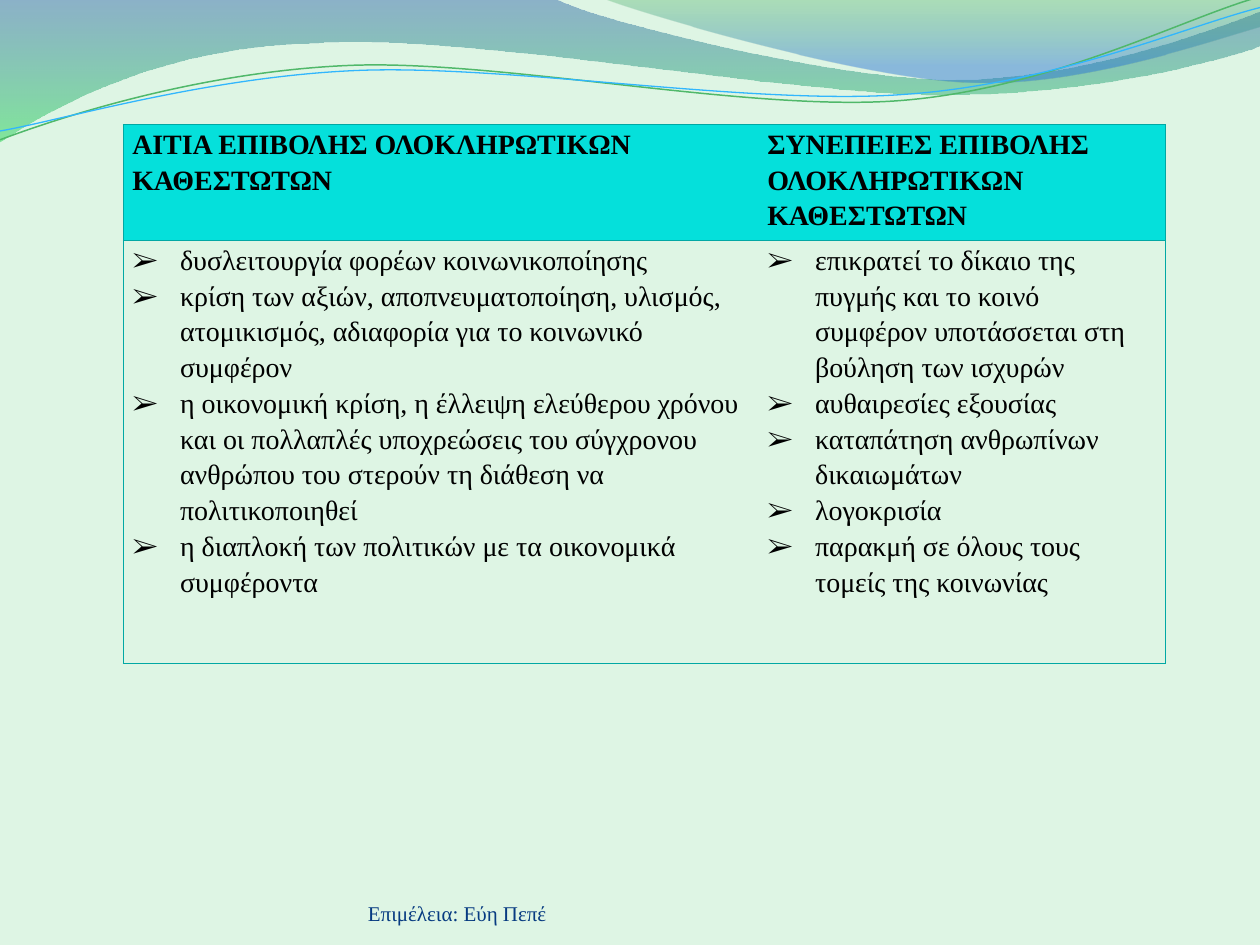
from pptx import Presentation
from pptx import util as u
from pptx.dml.color import RGBColor
from pptx.enum import text
from pptx.oxml import parse_xml
from pptx.oxml.ns import nsdecls

THEME = {
    "font": "Times New Roman", "table_size": 16, "footer_size": 12,
    "background": "DEF5E4", "header": "05E0DB", "border": "01A8A4",
    "ink": "000000", "footer": "073B81",
}

HEADERS = [
    "ΑΙΤΙΑ ΕΠΙΒΟΛΗΣ ΟΛΟΚΛΗΡΩΤΙΚΩΝ ΚΑΘΕΣΤΩΤΩΝ",
    "ΣΥΝΕΠΕΙΕΣ ΕΠΙΒΟΛΗΣ ΟΛΟΚΛΗΡΩΤΙΚΩΝ ΚΑΘΕΣΤΩΤΩΝ",
]
CAUSES = [
    "δυσλειτουργία φορέων κοινωνικοποίησης",
    "κρίση των αξιών, αποπνευματοποίηση, υλισμός, ατομικισμός, αδιαφορία για το κοινωνικό συμφέρον",
    "η οικονομική κρίση, η έλλειψη ελεύθερου χρόνου και οι πολλαπλές υποχρεώσεις του σύγχρονου "
    "ανθρώπου του στερούν τη διάθεση να πολιτικοποιηθεί",
    "η διαπλοκή των πολιτικών με τα οικονομικά συμφέροντα",
]
CONSEQUENCES = [
    "επικρατεί το δίκαιο της πυγμής και το κοινό συμφέρον υποτάσσεται στη βούληση των ισχυρών",
    "αυθαιρεσίες εξουσίας",
    "καταπάτηση ανθρωπίνων δικαιωμάτων",
    "λογοκρισία",
    "παρακμή σε όλους τους τομείς της κοινωνίας",
]
FOOTER = "Επιμέλεια: Εύη Πεπέ"

COLUMN_WIDTHS = [5.04, 3.23]
ROW_HEIGHTS = [0.47, 3.36]

# A pair is a straight segment; six numbers are a Bézier segment.
# Gradient stops: position %, colour, opacity %.
WAVES = [
    {"start": (0, 0),
     "segments": [(4.4, -0.01), (4.76, 0.17, 6.64, 0.63, 7.58, 0.63),
                  (8.53, 0.63, 9.58, 0.26, 10, 0.09), (10.01, 0.36),
                  (9.83, 0.44, 8.7, 0.76, 7.46, 0.75), (6.22, 0.75, 3.82, 0.28, 2.57, 0.34),
                  (1.29, 0.36, 0.46, 0.83, -0.01, 1.13), (0, 0)],
     "stops": [(0, "2960A7", 45), (100, "35DA5E", 55)]},
    {"start": (4.79, -0.01),
     "segments": [(5.09, 0.11, 6.82, 0.62, 7.69, 0.65), (8.56, 0.69, 9.61, 0.32, 10, 0.21),
                  (10, 0), (4.79, -0.01)],
     "stops": [(0, "36A752", 30), (80, "2472D3", 45)]},
    {"start": (0, 1.11),
     "segments": [(0.48, 0.93, 1.58, 0.57, 2.77, 0.52), (3.95, 0.47, 5.93, 0.89, 7.13, 0.8),
                  (8.33, 0.71, 9.38, 0.15, 9.98, -0.02)],
     "line": ("50B86A", 0.85)},
    {"start": (0, 1.04),
     "segments": [(0.47, 0.96, 1.64, 0.61, 2.83, 0.56), (4.03, 0.51, 5.97, 0.84, 7.17, 0.75),
                  (8.36, 0.67, 9.41, 0.21, 10, 0.06)],
     "line": ("31B6FD", 0.75)},
]


def rgb(name):
    return RGBColor.from_string(name)


def bend_segments(shape, segments):
    """Turn the straight segments that have control points into Bézier curves."""
    straight_lines = list(shape._element.spPr.iter("{*}lnTo"))
    for straight, segment in zip(straight_lines, segments):
        if len(segment) == 6:
            points = "".join(
                f'<a:pt x="{u.Inches(x) - shape.left}" y="{u.Inches(y) - shape.top}"/>'
                for x, y in zip(segment[::2], segment[1::2]))
            curve = parse_xml(f'<a:cubicBezTo {nsdecls("a")}>{points}</a:cubicBezTo>')
            straight.getparent().replace(straight, curve)


def add_wave(slide, wave):
    closed = "stops" in wave
    builder = slide.shapes.build_freeform(*map(u.Inches, wave["start"]))
    ends = [tuple(map(u.Inches, segment[-2:])) for segment in wave["segments"]]
    builder.add_line_segments(ends, close=closed)
    shape = builder.convert_to_shape()
    bend_segments(shape, wave["segments"])
    shape.shadow.inherit = False
    if closed:
        shape.line.fill.background()
        stops = "".join(
            f'<a:gs pos="{position * 1000}"><a:srgbClr val="{color}">'
            f'<a:alpha val="{opacity * 1000}"/></a:srgbClr></a:gs>'
            for position, color, opacity in wave["stops"])
        gradient = parse_xml(f'<a:gradFill {nsdecls("a")}><a:gsLst>{stops}</a:gsLst>'
                             '<a:lin ang="5400000" scaled="0"/></a:gradFill>')
        shape._element.spPr.find("{*}custGeom").addnext(gradient)
    else:
        color, width = wave["line"]
        shape.fill.background()
        shape.line.color.rgb = rgb(color)
        shape.line.width = u.Pt(width)


def style_font(font, size, color, bold=False):
    font.name, font.size, font.bold = THEME["font"], u.Pt(size), bold
    font.color.rgb = rgb(color)


def set_borders(cell, sides):
    """Draw the named sides (L, R, T, B) and clear the others."""
    properties = cell._tc.get_or_add_tcPr()
    for index, side in enumerate("LRTB"):
        fill = (f'<a:solidFill><a:srgbClr val="{THEME["border"]}"/></a:solidFill>'
                if side in sides else "<a:noFill/>")
        properties.insert(index, parse_xml(
            f'<a:ln{side} {nsdecls("a")} w="{u.Pt(0.75)}">{fill}</a:ln{side}>'))


def add_bullet(paragraph):
    properties = paragraph._p.get_or_add_pPr()
    indent = u.Inches(0.38)
    properties.set("marL", str(indent))
    properties.set("indent", str(-indent))
    properties.append(parse_xml(f'<a:buFont {nsdecls("a")} typeface="{THEME["font"]}"/>'))
    properties.append(parse_xml(f'<a:buChar {nsdecls("a")} char="➢"/>'))


def fill_cell(cell, lines, is_header):
    cell.margin_left = cell.margin_right = u.Inches(0.07)
    cell.margin_top = cell.margin_bottom = 0
    if is_header:
        cell.fill.solid()
        cell.fill.fore_color.rgb = rgb(THEME["header"])
    else:
        cell.fill.background()
    cell.text = "\n".join(lines)
    for paragraph in cell.text_frame.paragraphs:
        paragraph.line_spacing = 1.15
        # Row heights follow the run size, so the font is set on the run.
        style_font(paragraph.runs[0].font, THEME["table_size"], THEME["ink"], is_header)
        if not is_header:
            add_bullet(paragraph)


def add_comparison(slide):
    frame = slide.shapes.add_table(
        2, 2, u.Inches(0.98), u.Inches(0.99),
        u.Inches(sum(COLUMN_WIDTHS)), u.Inches(sum(ROW_HEIGHTS)))
    table = frame.table
    table.first_row = table.horz_banding = False
    for column, width in zip(table.columns, COLUMN_WIDTHS):
        column.width = u.Inches(width)
    for row, height in zip(table.rows, ROW_HEIGHTS):
        row.height = u.Inches(height)
    contents = [[[header] for header in HEADERS], [CAUSES, CONSEQUENCES]]
    for row, cells in enumerate(contents):
        for column, lines in enumerate(cells):
            cell = table.cell(row, column)
            fill_cell(cell, lines, row == 0)
            set_borders(cell, "LR"[column] + "TB")


def add_footer(slide):
    box = slide.shapes.add_textbox(u.Inches(2.92), u.Inches(6.95), u.Inches(3.67), u.Inches(0.4))
    frame = box.text_frame
    frame.word_wrap = True
    frame.vertical_anchor = text.MSO_ANCHOR.BOTTOM
    frame.margin_left = frame.margin_right = frame.margin_top = frame.margin_bottom = 0
    frame.text = FOOTER
    style_font(frame.paragraphs[0].font, THEME["footer_size"], THEME["footer"])


def main():
    presentation = Presentation()
    presentation.slide_width, presentation.slide_height = u.Inches(10), u.Inches(7.5)
    slide = presentation.slides.add_slide(presentation.slide_layouts[6])
    slide.background.fill.solid()
    slide.background.fill.fore_color.rgb = rgb(THEME["background"])
    for wave in WAVES:
        add_wave(slide, wave)
    add_footer(slide)
    add_comparison(slide)
    presentation.save("out.pptx")


if __name__ == "__main__":
    main()
